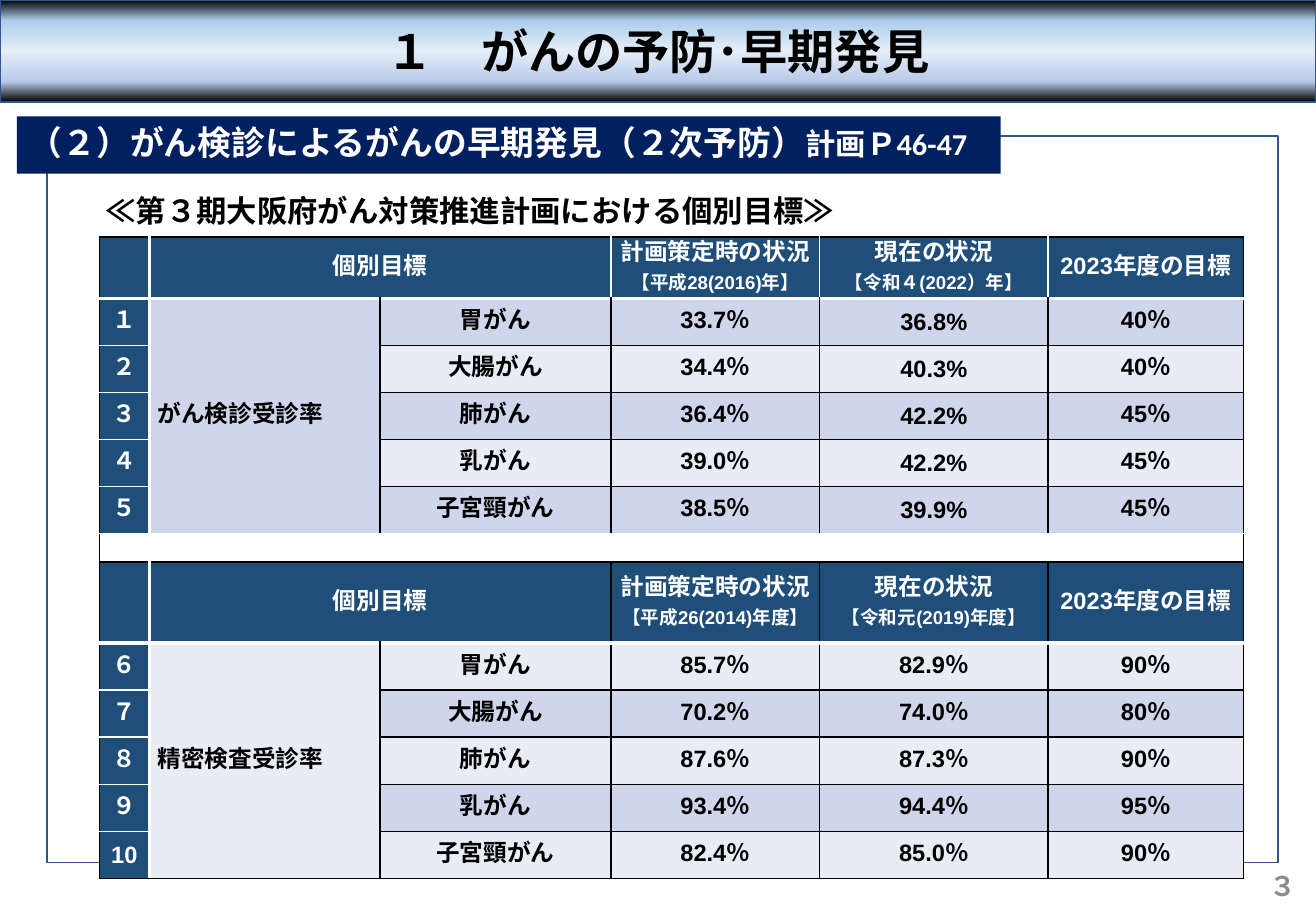
from dataclasses import dataclass

from lxml.etree import SubElement
from pptx import Presentation
from pptx.dml.color import RGBColor
from pptx.enum.shapes import MSO_SHAPE
from pptx.enum.text import MSO_ANCHOR, MSO_AUTO_SIZE, PP_ALIGN
from pptx.oxml.ns import qn
from pptx.util import Pt

COLORS = {
    "black": "000000", "white": "FFFFFF", "header": "1F4E79", "navy": "002060",
    "outline": "325491", "band_dark": "CFD5EA", "band_light": "E9EBF5", "gray": "8C8C8C",
}
TITLE_STOPS = [(0, "000000"), (20, "ADCDEA"), (50, "E5EEF8"), (80, "B9CAE9"), (100, "000000")]
CJK_FONT = "Noto Sans CJK JP"
COLUMN_WIDTHS = [29.5, 136.8, 136.8, 123.8, 135.4, 115.9]
BODY_HEIGHT = 27.9
GAP_HEIGHT = 6
CANCERS = ["胃がん", "大腸がん", "肺がん", "乳がん", "子宮頸がん"]


@dataclass
class Box:
    left: float
    top: float
    width: float
    height: float

    def lengths(self):
        return Pt(self.left), Pt(self.top), Pt(self.width), Pt(self.height)


@dataclass
class Edge:
    color: str = "black"
    width: float = 1


@dataclass
class GoalSection:
    category: str
    baseline: str
    current: str
    header_height: float
    divider: str
    bottom: str
    numbers: list[str]
    rates: list[tuple[str, str, str]]


THICK = Edge("white", 2.25)
SECTIONS = [
    GoalSection(
        "がん検診受診率", "【平成28(2016)年】", "【令和４(2022）年】", 36.5, "white", "white",
        ["１", "２", "３", "４", "５"],
        [("33.7％", "36.8%", "40％"), ("34.4％", "40.3%", "40％"), ("36.4％", "42.2%", "45％"),
         ("39.0％", "42.2%", "45％"), ("38.5％", "39.9%", "45％")],
    ),
    GoalSection(
        "精密検査受診率", "【平成26(2014)年度】", "【令和元(2019)年度】", 41.8, "black", "black",
        ["６", "７", "８", "９", "10"],
        [("85.7％", "82.9％", "90％"), ("70.2％", "74.0％", "80％"), ("87.6％", "87.3％", "90％"),
         ("93.4％", "94.4％", "95％"), ("82.4％", "85.0％", "90％")],
    ),
]


def color(name: str) -> RGBColor:
    return RGBColor.from_string(COLORS[name])


def style_paragraph(paragraph, size: float, font_name: str, font_color: str,
                    alignment=PP_ALIGN.LEFT, line_spacing: float | None = None) -> None:
    paragraph.alignment = alignment
    if line_spacing:
        paragraph.line_spacing = Pt(line_spacing)
    font = paragraph.font
    font.size, font.name, font.bold = Pt(size), font_name, True
    font.color.rgb = color(font_color)
    properties = paragraph._p.get_or_add_pPr().find(qn("a:defRPr"))
    SubElement(properties, qn("a:ea"), typeface=CJK_FONT)


def add_rectangle(slide, box: Box, fill: str, outline: str | None = None):
    shape = slide.shapes.add_shape(MSO_SHAPE.RECTANGLE, *box.lengths())
    shape.shadow.inherit = False
    shape.fill.solid()
    shape.fill.fore_color.rgb = color(fill)
    if outline:
        shape.line.color.rgb = color(outline)
        shape.line.width = Pt(1)
    else:
        shape.line.fill.background()
    return shape


def add_text(slide, box: Box, text: str, size: float, font_name: str, font_color: str,
             alignment=PP_ALIGN.LEFT, anchor=MSO_ANCHOR.TOP) -> None:
    frame = slide.shapes.add_textbox(*box.lengths()).text_frame
    frame.word_wrap = True
    frame.vertical_anchor = anchor
    frame.text = text
    style_paragraph(frame.paragraphs[0], size, font_name, font_color, alignment)


def format_title(slide) -> None:
    title = slide.shapes.title
    title.left, title.top, title.width, title.height = Box(0, 0, 780, 60.5).lengths()
    title.fill.gradient()
    title.fill.gradient_angle = 270
    stops = title._element.spPr.find(".//" + qn("a:gsLst"))
    for stop in list(stops):
        stops.remove(stop)
    for position, value in TITLE_STOPS:
        stop = SubElement(stops, qn("a:gs"), pos=str(position * 1000))
        SubElement(stop, qn("a:srgbClr"), val=value)
    title.line.color.rgb = color("outline")
    title.line.width = Pt(1)
    frame = title.text_frame
    frame.text = "１　がんの予防･早期発見"
    frame.auto_size = MSO_AUTO_SIZE.NONE
    frame.vertical_anchor = MSO_ANCHOR.MIDDLE
    style_paragraph(frame.paragraphs[0], 28, CJK_FONT, "black", PP_ALIGN.CENTER)


def format_cell(cell, text: str, fill: str, font_color: str, left: Edge, right: Edge,
                top: Edge, bottom: Edge, alignment=PP_ALIGN.CENTER) -> None:
    properties = cell._tc.get_or_add_tcPr()
    for tag, edge in zip(("a:lnL", "a:lnR", "a:lnT", "a:lnB"), (left, right, top, bottom)):
        line = SubElement(properties, qn(tag), w=str(Pt(edge.width)))
        SubElement(SubElement(line, qn("a:solidFill")), qn("a:srgbClr"), val=COLORS[edge.color])
    cell.fill.solid()
    cell.fill.fore_color.rgb = color(fill)
    cell.margin_left = cell.margin_right = Pt(5)
    cell.margin_top = cell.margin_bottom = Pt(0)
    cell.vertical_anchor = MSO_ANCHOR.MIDDLE
    cell.text = text
    for index, paragraph in enumerate(cell.text_frame.paragraphs):
        style_paragraph(paragraph, 11 if index else 14, "Arial", font_color, alignment, 16)


def fill_section(table, section: GoalSection, first_row: int) -> None:
    headings = ["", "個別目標", "", f"計画策定時の状況\n{section.baseline}",
                f"現在の状況\n{section.current}", "2023年度の目標"]
    last_column = len(headings) - 1
    divider = Edge(section.divider)
    table.rows[first_row].height = Pt(section.header_height)
    for column, heading in enumerate(headings):
        left = Edge() if column == 0 else THICK if column == 1 else divider
        right = THICK if column == 0 else Edge() if column == last_column else divider
        format_cell(table.cell(first_row, column), heading, "header", "white",
                    left, right, Edge(), THICK)
    table.cell(first_row, 1).merge(table.cell(first_row, 2))

    for index, (number, cancer, rates) in enumerate(zip(section.numbers, CANCERS, section.rates)):
        row = first_row + 1 + index
        is_last = index == len(CANCERS) - 1
        band = "band_dark" if row % 2 else "band_light"
        texts = [number, section.category if index == 0 else "", cancer, *rates]
        for column, text in enumerate(texts):
            is_number = column == 0
            inner = Edge("white") if is_number else Edge()
            format_cell(
                table.cell(row, column), text,
                "header" if is_number else band, "white" if is_number else "black",
                THICK if column == 1 else Edge(), THICK if is_number else Edge(),
                THICK if index == 0 else inner, Edge(section.bottom) if is_last else inner,
                PP_ALIGN.LEFT if column == 1 else PP_ALIGN.CENTER,
            )
    table.cell(first_row + 1, 1).merge(table.cell(first_row + len(CANCERS), 1))


def add_goal_table(slide) -> None:
    section_rows = len(CANCERS) + 1
    row_count = 2 * section_rows + 1
    box = Box(59, 140.4, sum(COLUMN_WIDTHS), 364.3)
    table = slide.shapes.add_table(row_count, len(COLUMN_WIDTHS), *box.lengths()).table
    table.first_row = table.horz_banding = False
    for column, width in zip(table.columns, COLUMN_WIDTHS):
        column.width = Pt(width)
    for row in table.rows:
        row.height = Pt(BODY_HEIGHT)
    for index, section in enumerate(SECTIONS):
        fill_section(table, section, index * (section_rows + 1))
    table.rows[section_rows].height = Pt(GAP_HEIGHT)
    for column in range(len(COLUMN_WIDTHS)):
        format_cell(table.cell(section_rows, column), "", "white", "black",
                    Edge(), Edge(), Edge("white"), Edge("white"))
    table.cell(section_rows, 0).merge(table.cell(section_rows, len(COLUMN_WIDTHS) - 1))


def add_banner(slide) -> None:
    frame = add_rectangle(slide, Box(10, 69, 583.2, 34), "navy").text_frame
    frame.word_wrap = True
    frame.vertical_anchor = MSO_ANCHOR.MIDDLE
    paragraph = frame.paragraphs[0]
    style_paragraph(paragraph, 20, "Calibri", "white", line_spacing=20)
    paragraph.add_run().text = "（２）がん検診によるがんの早期発見（２次予防）"
    plan_pages = paragraph.add_run()
    plan_pages.text = "計画Ｐ46-47"
    plan_pages.font.size = Pt(18)


def main() -> None:
    presentation = Presentation()
    presentation.slide_width, presentation.slide_height = Pt(780), Pt(540)
    slide = presentation.slides.add_slide(presentation.slide_layouts[5])
    format_title(slide)
    add_rectangle(slide, Box(28, 80.6, 729.4, 430.6), "white", "outline")
    add_text(slide, Box(55.4, 110.2, 481, 29), "≪第３期大阪府がん対策推進計画における個別目標≫",
             18, "Calibri", "black")
    add_goal_table(slide)
    add_banner(slide)
    add_text(slide, Box(525, 510.5, 250.5, 28.8), "３", 16, CJK_FONT, "gray",
             PP_ALIGN.RIGHT, MSO_ANCHOR.MIDDLE)
    presentation.save("out.pptx")


if __name__ == "__main__":
    main()
